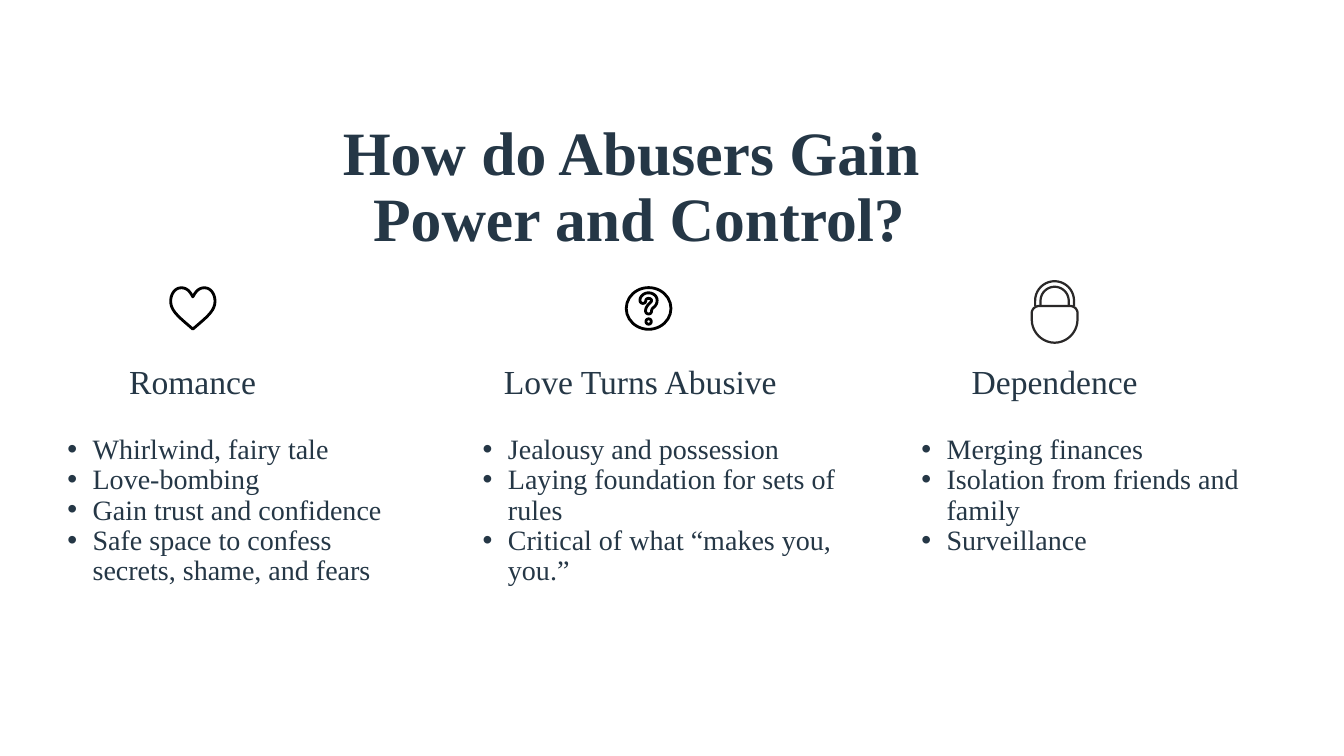
import dataclasses

import lxml.etree
import pptx
import pptx.dml.color
import pptx.enum.shapes
import pptx.enum.text
import pptx.oxml.ns
import pptx.util

ALIGN = pptx.enum.text.PP_ALIGN
OVAL = pptx.enum.shapes.MSO_SHAPE.OVAL
FINE = 100


@dataclasses.dataclass(frozen=True)
class Theme:
    font: str = "Times New Roman"
    ink: str = "253746"
    icon: str = "000000"
    lock: str = "2A2828"
    title: int = 44
    heading: int = 24
    body: int = 20
    stroke: float = 2
    thin: float = 1.6


THEME = Theme()
HEADING_Y, HEADING_H = 47.07, 5.87
LIST_Y = 56.27
COLUMNS = [
    dict(heading="Romance", x=0.9, w=26.86, align=ALIGN.CENTER,
         items=["Whirlwind, fairy tale", "Love-bombing", "Gain trust and confidence",
                "Safe space to confess secrets, shame, and fears"],
         list_x=4.28, list_w=25.88, list_h=34.27),
    dict(heading="Love Turns Abusive", x=36.76, w=27.53, align=ALIGN.LEFT,
         items=["Jealousy and possession", "Laying foundation for sets of rules",
                "Critical of what “makes you, you.”"],
         list_x=35.18, list_w=29.71, list_h=25.87),
    dict(heading="Dependence", x=68.87, w=19.2, align=ALIGN.CENTER,
         items=["Merging finances", "Isolation from friends and family", "Surveillance"],
         list_x=67.82, list_w=29.71, list_h=20.67),
]

HEART_HALF = [(0, 10.5), (-3, 5), (-6, 1.5), (-11.5, 1.5), (-18, 1.5), (-22, 8), (-22, 15),
              (-22, 25), (-12, 32), (0, 42.5)]
HEART = HEART_HALF + [(-x, y) for x, y in HEART_HALF[-2::-1]]
QUESTION = [(0, 6.5), (4.7, 6.5), (8.5, 9.8), (8.5, 14), (8.5, 17), (7, 19.5), (5, 21),
            (3.8, 21.8), (3, 23), (3, 24.5), (3, 28.5), (-3, 28.5), (-3, 24.5),
            (-3, 21.5), (-1, 18.5), (1.5, 16.5), (4, 14.5), (3, 12), (0, 12),
            (-1.5, 12), (-2.7, 13), (-2.7, 14), (-2.7, 18), (-8.5, 18), (-8.5, 14),
            (-8.5, 9.8), (-4.7, 6.5), (0, 6.5)]
LOCK_BODY = [(-15, 25.5), (-19, 25.5), (-22.7, 28.5), (-22.7, 32.5), (-22.7, 34), (-22.7, 37),
             (-22.7, 39), (-22.7, 51.5), (-12.5, 62), (0, 62), (12.5, 62), (22.7, 51.5),
             (22.7, 39), (22.7, 37), (22.7, 34), (22.7, 32.5), (22.7, 28.5), (19, 25.5),
             (15, 25.5), (5, 25.5), (-5, 25.5), (-15, 25.5)]


def rgb(value):
    return pptx.dml.color.RGBColor.from_string(value)


def arch(radius, top, foot):
    spring, pull = top + radius, radius * 0.55
    left = [(-radius, foot), (-radius, foot), (-radius, spring), (-radius, spring),
            (-radius, spring - pull), (-pull, top), (0, top)]
    return left + [(-x, y) for x, y in left[-2::-1]]


def sample(points, steps=10):
    out = [points[0]]
    for i in range(0, len(points) - 1, 3):
        a, b, c, d = points[i:i + 4]
        for k in range(1, steps + 1):
            t = k / steps
            u = 1 - t
            out.append(tuple(u**3 * a[n] + 3 * u * u * t * b[n] + 3 * u * t * t * c[n]
                             + t**3 * d[n] for n in (0, 1)))
    return out


class Page:
    def __init__(self, prs):
        self.s = prs.slides.add_slide(prs.slide_layouts[6])
        self.width, self.height = prs.slide_width, prs.slide_height
        self.unit = prs.slide_width * 0.00075

    def x(self, share):
        return round(self.width * share / 100)

    def y(self, share):
        return round(self.height * share / 100)

    def text(self, lines, x, y, w, h, *, size, align=ALIGN.LEFT, bold=False,
             bullet=False, after=0):
        sp = self.s.shapes.add_textbox(self.x(x), self.y(y), self.x(w), self.y(h))
        tf = sp.text_frame
        tf.word_wrap = True
        tf.margin_left = tf.margin_right = pptx.util.Inches(0.1)
        tf.margin_top = tf.margin_bottom = pptx.util.Inches(0.1)
        for i, line in enumerate(lines):
            p = tf.add_paragraph() if i else tf.paragraphs[0]
            p.alignment, p.line_spacing = align, 0.9
            p.space_after = pptx.util.Pt(after)
            if bullet:
                add_bullet(p)
            r = p.add_run()
            r.text = line
            r.font.name, r.font.size = THEME.font, pptx.util.Pt(size)
            r.font.bold, r.font.color.rgb = bold, rgb(THEME.ink)

    def curve(self, points, cx, top, closed=True, **style):
        pts = [(x * FINE, y * FINE) for x, y in sample(points)]
        fb = self.s.shapes.build_freeform(*pts[0], scale=self.unit / FINE)
        fb.add_line_segments(pts[1:], close=closed)
        outline(fb.convert_to_shape(self.x(cx), self.y(top)), **style)

    def oval(self, cx, top, middle, rx, ry):
        sp = self.s.shapes.add_shape(
            OVAL, round(self.x(cx) - rx * self.unit),
            round(self.y(top) + (middle - ry) * self.unit),
            round(2 * rx * self.unit), round(2 * ry * self.unit))
        outline(sp)


def add_bullet(p):
    pPr = p._p.get_or_add_pPr()
    indent = pptx.util.Inches(0.25)
    pPr.set("marL", str(indent))
    pPr.set("indent", str(-indent))
    for tag, key, value in (("a:buFont", "typeface", "Arial"), ("a:buChar", "char", "•")):
        lxml.etree.SubElement(pPr, pptx.oxml.ns.qn(tag)).set(key, value)


def outline(sp, color=THEME.icon, weight=THEME.stroke):
    sp.shadow.inherit = False
    sp.fill.background()
    sp.line.color.rgb = rgb(color)
    sp.line.width = pptx.util.Pt(weight)


def draw_heart(page, cx, top):
    page.curve(HEART, cx, top)


def draw_question(page, cx, top):
    page.curve(QUESTION, cx, top)
    page.oval(cx, top, middle=35, rx=2.7, ry=2.7)
    page.oval(cx, top, middle=22, rx=22.2, ry=20.7)


def draw_lock(page, cx, top):
    style = dict(color=THEME.lock, weight=THEME.thin)
    page.curve(LOCK_BODY, cx, top, **style)
    for radius, crown in ((19.3, 1), (14, 6.5)):
        page.curve(arch(radius, crown, 25.5), cx, top, closed=False, **style)


def main():
    prs = pptx.Presentation()
    prs.slide_width, prs.slide_height = pptx.util.Inches(13.33), pptx.util.Inches(7.5)
    page = Page(prs)
    page.text(["How do Abusers Gain ", "Power and Control?"], 5.85, 14.8, 83.42, 18.93,
              size=THEME.title, align=ALIGN.CENTER, bold=True)
    for col in COLUMNS:
        page.text([col["heading"]], col["x"], HEADING_Y, col["w"], HEADING_H,
                  size=THEME.heading, align=col["align"], after=16)
        page.text(col["items"], col["list_x"], LIST_Y, col["list_w"], col["list_h"],
                  size=THEME.body, bullet=True)
    draw_heart(page, 14.35, 37.87)
    draw_question(page, 48.26, 37.87)
    draw_lock(page, 78.47, 37.07)
    prs.save("out.pptx")


if __name__ == "__main__":
    main()
